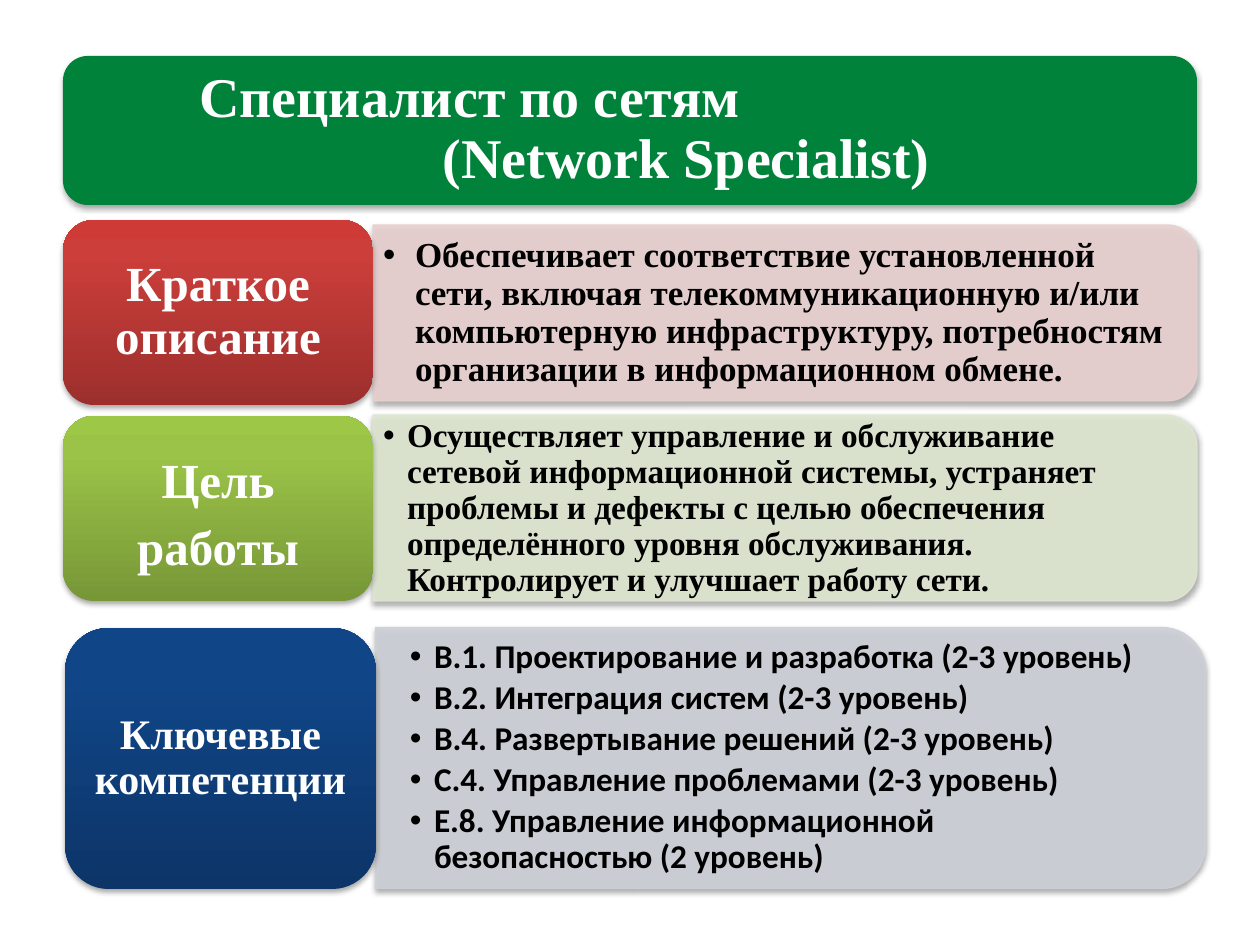
import copy
from dataclasses import dataclass

import lxml.etree
import pptx
import pptx.dml.color
import pptx.enum.shapes
import pptx.enum.text
import pptx.oxml
import pptx.oxml.ns
import pptx.util

RGBColor = pptx.dml.color.RGBColor
ShapeType = pptx.enum.shapes.MSO_SHAPE
Align = pptx.enum.text.PP_ALIGN

EMU_PER_PX = 914400 / 126
SERIF, SANS = "Times New Roman", "Calibri"

WHITE = RGBColor(0xFF, 0xFF, 0xFF)
BLACK = RGBColor(0x00, 0x00, 0x00)
GREEN = RGBColor(0x00, 0x82, 0x3B)
RED_STOPS = (RGBColor(0x9C, 0x2F, 0x2D), RGBColor(0xCB, 0x3E, 0x3A), RGBColor(0xCE, 0x3B, 0x37))
LIME_STOPS = (RGBColor(0x77, 0x97, 0x37), RGBColor(0x9B, 0xC3, 0x48), RGBColor(0x9D, 0xC7, 0x46))
NAVY_STOPS = (RGBColor(0x0D, 0x35, 0x68), RGBColor(0x10, 0x45, 0x87), RGBColor(0x0E, 0x45, 0x8A))
PINK = RGBColor(0xE8, 0xD0, 0xD0)
PALE_LIME = RGBColor(0xDE, 0xE7, 0xD1)
PALE_BLUE = RGBColor(0xCD, 0xD0, 0xD7)


@dataclass(frozen=True)
class Box:
    left: int
    top: int
    width: int
    height: int


@dataclass(frozen=True)
class Section:
    tile: Box
    tile_stops: tuple[RGBColor, ...]
    label: str
    label_size: int
    label_spacing: float
    panel: Box
    panel_color: RGBColor
    list_box: Box
    list_inset: tuple[int, int]
    items: tuple[str, ...]
    font: str
    size: int
    indent: int


SECTIONS = (
    Section(
        Box(63, 220, 310, 185), RED_STOPS, "Краткое описание", 28, 0.9,
        Box(373, 225, 824, 176), PINK, Box(373, 233, 816, 160), (10, 5),
        ("Обеспечивает соответствие установленной сети, включая телекоммуникационную "
         "и/или компьютерную инфраструктуру, потребностям организации в информационном обмене.",),
        SERIF, 20, 32,
    ),
    Section(
        Box(63, 416, 310, 185), LIME_STOPS, "Цель работы", 28, 1.14,
        Box(373, 415, 824, 186), PALE_LIME, Box(373, 425, 814, 168), (10, 5),
        ("Осуществляет управление и обслуживание сетевой информационной системы, "
         "устраняет проблемы и дефекты с целью обеспечения определённого уровня "
         "обслуживания. Контролирует и улучшает работу сети.",),
        SERIF, 19, 24,
    ),
    Section(
        Box(65, 628, 311, 261), NAVY_STOPS, "Ключевые компетенции", 24, 0.9,
        Box(376, 628, 830, 261), PALE_BLUE, Box(376, 640, 816, 236), (34, 18),
        ("В.1. Проектирование и разработка (2-3 уровень)",
         "В.2. Интеграция систем (2-3 уровень)",
         "В.4. Развертывание решений (2-3 уровень)",
         "С.4. Управление проблемами (2-3 уровень)",
         "Е.8. Управление информационной безопасностью (2 уровень)"),
        SANS, 19, 24,
    ),
)


def px(length: float) -> int:
    return round(length * EMU_PER_PX)


def place(shape, box: Box) -> None:
    shape.left, shape.top = px(box.left), px(box.top)
    shape.width, shape.height = px(box.width), px(box.height)


def add_child(parent, tag: str, **attributes: str):
    return lxml.etree.SubElement(parent, pptx.oxml.ns.qn(tag), attributes)


def add_shape(slide, kind, box: Box):
    """Add a shape without a line, with a soft shadow below it."""
    shape = slide.shapes.add_shape(kind, 0, 0, 0, 0)
    place(shape, box)
    shape.line.fill.background()
    shape.shadow.inherit = False
    effects = shape._element.spPr.find(pptx.oxml.ns.qn("a:effectLst"))
    shadow = add_child(effects, "a:outerShdw", blurRad="40000", dist="23000",
                       dir="5400000", rotWithShape="0")
    add_child(add_child(shadow, "a:srgbClr", val="000000"), "a:alpha", val="35000")
    return shape


def fill_gradient(shape, colors: tuple[RGBColor, ...]) -> None:
    """Run the colours from the bottom edge to the top."""
    fill = shape.fill
    fill.gradient()
    fill.gradient_angle = 90
    stop_list = shape._element.spPr.find(".//" + pptx.oxml.ns.qn("a:gsLst"))
    stop_list.append(copy.deepcopy(stop_list[-1]))
    for stop, color, position in zip(fill.gradient_stops, colors, (0, 0.8, 1)):
        stop.color.rgb = color
        stop.position = position


def prepare_frame(shape, inset_x: int, inset_y: int):
    frame = shape.text_frame
    frame.word_wrap = True
    frame.auto_size = pptx.enum.text.MSO_AUTO_SIZE.NONE
    frame.vertical_anchor = pptx.enum.text.MSO_ANCHOR.MIDDLE
    frame.margin_left = frame.margin_right = px(inset_x)
    frame.margin_top = frame.margin_bottom = px(inset_y)
    return frame


def format_paragraph(paragraph, font: str, size: int, color: RGBColor,
                     alignment, spacing: float = 0.9) -> None:
    paragraph.alignment = alignment
    paragraph.line_spacing = spacing
    paragraph.space_before = pptx.util.Pt(0)
    for run in paragraph.runs:
        run.font.name = font
        run.font.size = pptx.util.Pt(size)
        run.font.bold = True
        run.font.color.rgb = color


def add_bullet(paragraph, indent: int) -> None:
    properties = paragraph._p.get_or_add_pPr()
    properties.set("marL", str(px(indent)))
    properties.set("indent", str(-px(indent)))
    add_child(properties, "a:buFont", typeface="Arial")
    add_child(properties, "a:buChar", char="•")


def bring_to_front(slide, shape) -> None:
    slide.shapes._spTree.append(shape._element)


def draw_title(slide) -> None:
    banner = add_shape(slide, ShapeType.ROUNDED_RECTANGLE, Box(63, 56, 1134, 149))
    banner.fill.solid()
    banner.fill.fore_color.rgb = GREEN
    title = slide.shapes.title
    place(title, Box(71, 63, 1119, 134))
    frame = prepare_frame(title, 16, 16)
    frame.text = "Специалист по сетям\n(Network Specialist)"
    for paragraph, alignment in zip(frame.paragraphs, (Align.LEFT, Align.CENTER)):
        format_paragraph(paragraph, SERIF, 32, WHITE, alignment)
    frame.paragraphs[0]._p.get_or_add_pPr().set("marL", str(px(112)))
    bring_to_front(slide, title)


def draw_panel(slide, box: Box, color: RGBColor) -> None:
    """Draw a panel whose two right corners are round, by a quarter turn."""
    turned = Box(box.left + (box.width - box.height) // 2,
                 box.top + (box.height - box.width) // 2, box.height, box.width)
    panel = add_shape(slide, ShapeType.ROUND_2_SAME_RECTANGLE, turned)
    panel.rotation = 90
    panel.line.width = pptx.util.Pt(0.75)
    for fill in (panel.fill, panel.line.fill):
        fill.solid()
        fill.fore_color.rgb = color
    for color_element in panel._element.spPr.findall(
            ".//" + pptx.oxml.ns.qn("a:solidFill") + "/" + pptx.oxml.ns.qn("a:srgbClr")):
        add_child(color_element, "a:alpha", val="90000")


def draw_section(slide, section: Section, body) -> None:
    draw_panel(slide, section.panel, section.panel_color)
    place(body, section.list_box)
    frame = prepare_frame(body, *section.list_inset)
    frame.text = "\n".join(section.items)
    for paragraph in frame.paragraphs:
        format_paragraph(paragraph, section.font, section.size, BLACK, Align.LEFT)
        paragraph.space_after = pptx.util.Pt(2.85)
        add_bullet(paragraph, section.indent)
    bring_to_front(slide, body)

    tile = add_shape(slide, ShapeType.ROUNDED_RECTANGLE, section.tile)
    fill_gradient(tile, section.tile_stops)
    label = prepare_frame(tile, 13, 7)
    label.text = section.label
    format_paragraph(label.paragraphs[0], SERIF, section.label_size, WHITE,
                     Align.CENTER, section.label_spacing)


def main() -> None:
    presentation = pptx.Presentation()
    presentation.slide_width = px(1260)
    presentation.slide_height = px(945)
    comparison_layout = presentation.slide_layouts[4]
    slide = presentation.slides.add_slide(comparison_layout)
    *bodies, unused = list(slide.placeholders)[1:]
    unused._element.getparent().remove(unused._element)
    draw_title(slide)
    for section, body in zip(SECTIONS, bodies):
        draw_section(slide, section, body)
    presentation.save("out.pptx")


if __name__ == "__main__":
    main()
